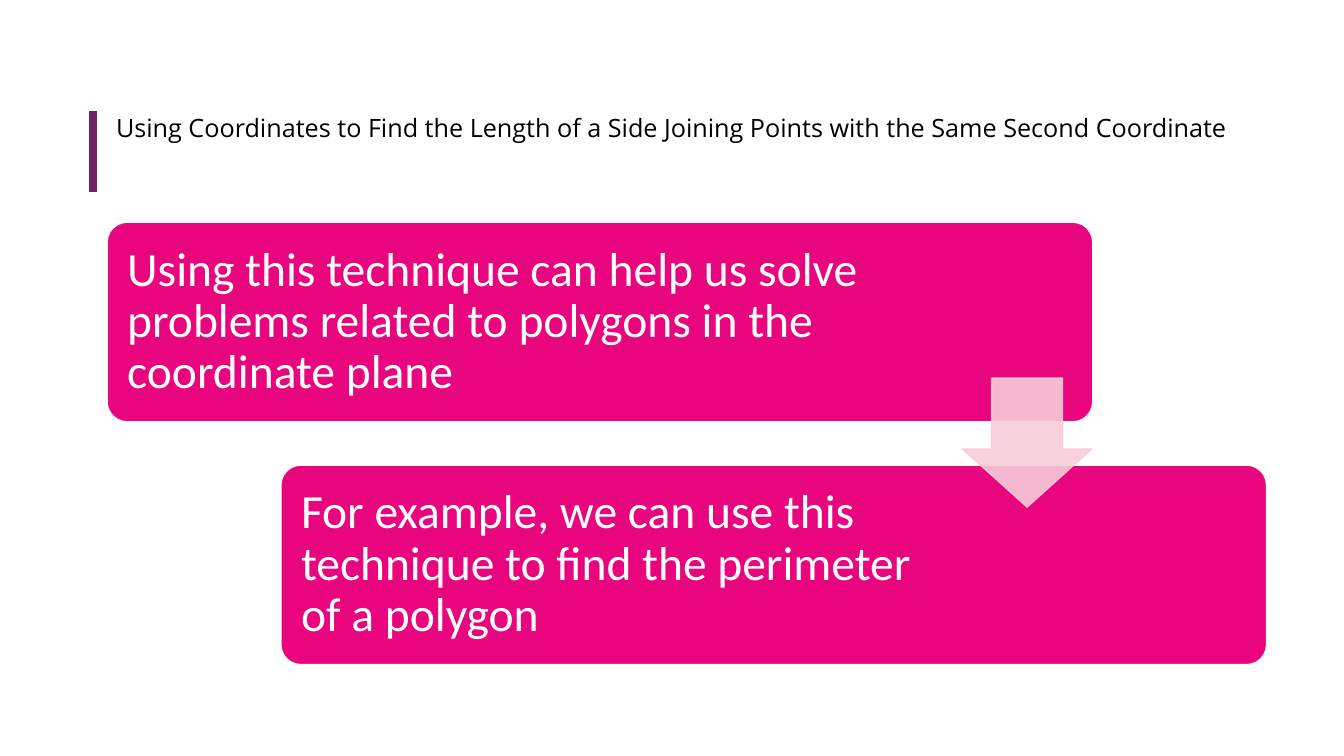
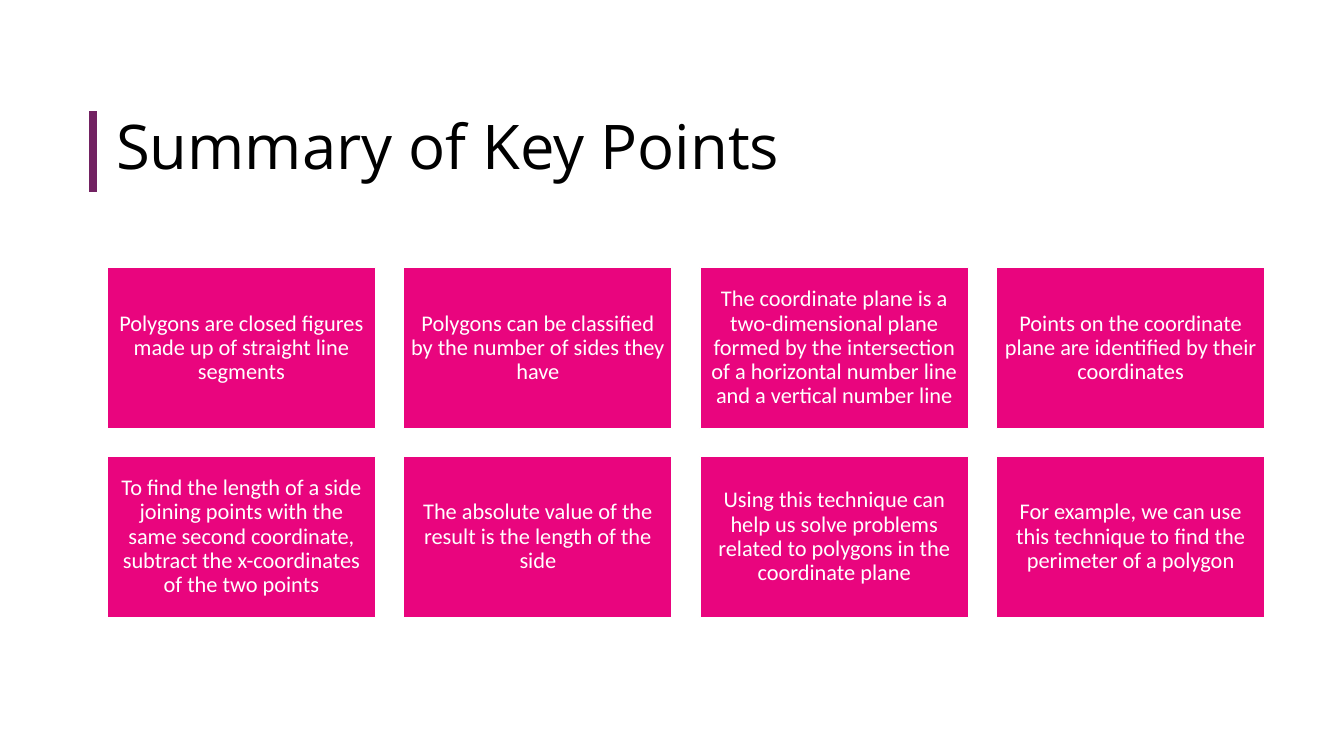
from dataclasses import dataclass

from lxml import etree
from pptx import Presentation
from pptx import util as u
from pptx.dml import color
from pptx.enum import shapes, text
from pptx.oxml import ns

COLOURS = {
    "title": "000000",
    "bar": "722262",
    "box": "E9057E",
    "box_text": "FFFFFF",
    "outline": "FFFFFF",
    "arrow": "F7CCD8",
}
TITLE_FONT = "Open Sans"
BODY_FONT = "Calibri"
LINE_SPACING = 0.9
TITLE_ONLY_LAYOUT = 5


@dataclass
class Box:
    """A filled box with text; lengths are centimetres."""
    wording: str
    left: float
    top: float
    width: float
    height: float
    size: int
    inset: float
    right_inset: float
    kind: shapes.MSO_SHAPE = shapes.MSO_SHAPE.RECTANGLE
    alignment: text.PP_ALIGN = text.PP_ALIGN.CENTER


def rgb(name: str) -> color.RGBColor:
    return color.RGBColor.from_string(COLOURS[name])


def write(frame, wording: str, font: str, size: int, colour: str,
          alignment: text.PP_ALIGN) -> None:
    paragraph = frame.paragraphs[0]
    paragraph.alignment = alignment
    paragraph.line_spacing = LINE_SPACING
    run = paragraph.add_run()
    run.text = wording
    run.font.name = font
    run.font.size = u.Pt(size)
    run.font.color.rgb = rgb(colour)


def add_filled_shape(slide, kind: shapes.MSO_SHAPE, left: float, top: float,
                     width: float, height: float, fill: str, line: str):
    shape = slide.shapes.add_shape(
        kind, u.Cm(left), u.Cm(top), u.Cm(width), u.Cm(height))
    shape.shadow.inherit = False
    shape.fill.solid()
    shape.fill.fore_color.rgb = rgb(fill)
    shape.line.color.rgb = rgb(line)
    shape.line.width = u.Pt(1)
    return shape


def add_box(slide, box: Box) -> None:
    shape = add_filled_shape(slide, box.kind, box.left, box.top,
                             box.width, box.height, "box", "outline")
    if box.kind == shapes.MSO_SHAPE.ROUNDED_RECTANGLE:
        shape.adjustments[0] = 0.1
    frame = shape.text_frame
    frame.word_wrap = True
    frame.vertical_anchor = text.MSO_ANCHOR.MIDDLE
    frame.margin_left = frame.margin_top = frame.margin_bottom = u.Cm(box.inset)
    frame.margin_right = u.Cm(box.right_inset)
    write(frame, box.wording, BODY_FONT, box.size, "box_text", box.alignment)


def add_step_arrow(slide) -> None:
    arrow = add_filled_shape(slide, shapes.MSO_SHAPE.DOWN_ARROW,
                             24.26, 9.53, 3.25, 3.25, "arrow", "arrow")
    arrow.adjustments[0] = 0.55
    arrow.adjustments[1] = 0.45
    # Fill and line are slightly transparent
    properties = arrow.element.spPr
    for solid_colour in properties.iter(ns.qn("a:srgbClr")):
        etree.SubElement(solid_colour, ns.qn("a:alpha"), val="90000")


def add_titled_slide(presentation, wording: str, size: int):
    slide = presentation.slides.add_slide(
        presentation.slide_layouts[TITLE_ONLY_LAYOUT])

    # Accent bar beside the title
    bar = slide.shapes.add_connector(
        shapes.MSO_CONNECTOR.STRAIGHT,
        u.Cm(2.34), u.Cm(2.8), u.Cm(2.34), u.Cm(4.83))
    bar.line.color.rgb = rgb("bar")
    bar.line.width = u.Pt(6)
    etree.SubElement(bar.element.spPr, ns.qn("a:effectLst"))

    # Title
    title = slide.shapes.title
    title.left, title.top = u.Cm(2.67), u.Cm(2.8)
    title.width, title.height = u.Cm(29.21), u.Cm(2.03)
    frame = title.text_frame
    frame.word_wrap = True
    frame.auto_size = text.MSO_AUTO_SIZE.NONE
    frame.vertical_anchor = text.MSO_ANCHOR.TOP
    write(frame, wording, TITLE_FONT, size, "title", text.PP_ALIGN.LEFT)
    return slide


def build_technique_slide(presentation) -> None:
    slide = add_titled_slide(
        presentation,
        "Using Coordinates to Find the Length of a Side Joining Points "
        "with the Same Second Coordinate", 18)
    # Each step: wording, left, top, room kept free on the right
    steps = [
        ("Using this technique can help us solve problems related to "
         "polygons in the coordinate plane", 2.7, 5.6, 5.25),
        ("For example, we can use this technique to find the perimeter "
         "of a polygon", 7.08, 11.72, 8.0),
    ]
    for wording, left, top, right_inset in steps:
        add_box(slide, Box(wording, left, top, 24.84, 5.03, 34, 0.36,
                           right_inset, shapes.MSO_SHAPE.ROUNDED_RECTANGLE,
                           text.PP_ALIGN.LEFT))
    add_step_arrow(slide)


def build_summary_slide(presentation) -> None:
    slide = add_titled_slide(presentation, "Summary of Key Points", 44)
    key_points = [
        "Polygons are closed figures made up of straight line segments",
        "Polygons can be classified by the number of sides they have",
        "The coordinate plane is a two-dimensional plane formed by the "
        "intersection of a horizontal number line and a vertical number line",
        "Points on the coordinate plane are identified by their coordinates",
        "To find the length of a side joining points with the same second "
        "coordinate, subtract the x-coordinates of the two points",
        "The absolute value of the result is the length of the side",
        "Using this technique can help us solve problems related to "
        "polygons in the coordinate plane",
        "For example, we can use this technique to find the perimeter "
        "of a polygon",
    ]
    # Grid of four columns
    columns, width, height, gap = 4, 6.77, 4.06, 0.7
    for index, wording in enumerate(key_points):
        row, column = divmod(index, columns)
        add_box(slide, Box(wording, 2.7 + column * (width + gap),
                           6.74 + row * (height + gap),
                           width, height, 16, 0.17, 0.17))


def main() -> None:
    presentation = Presentation()
    presentation.slide_width = u.Cm(33.87)
    presentation.slide_height = u.Cm(19.05)
    build_technique_slide(presentation)
    build_summary_slide(presentation)
    presentation.save("out.pptx")


if __name__ == "__main__":
    main()
